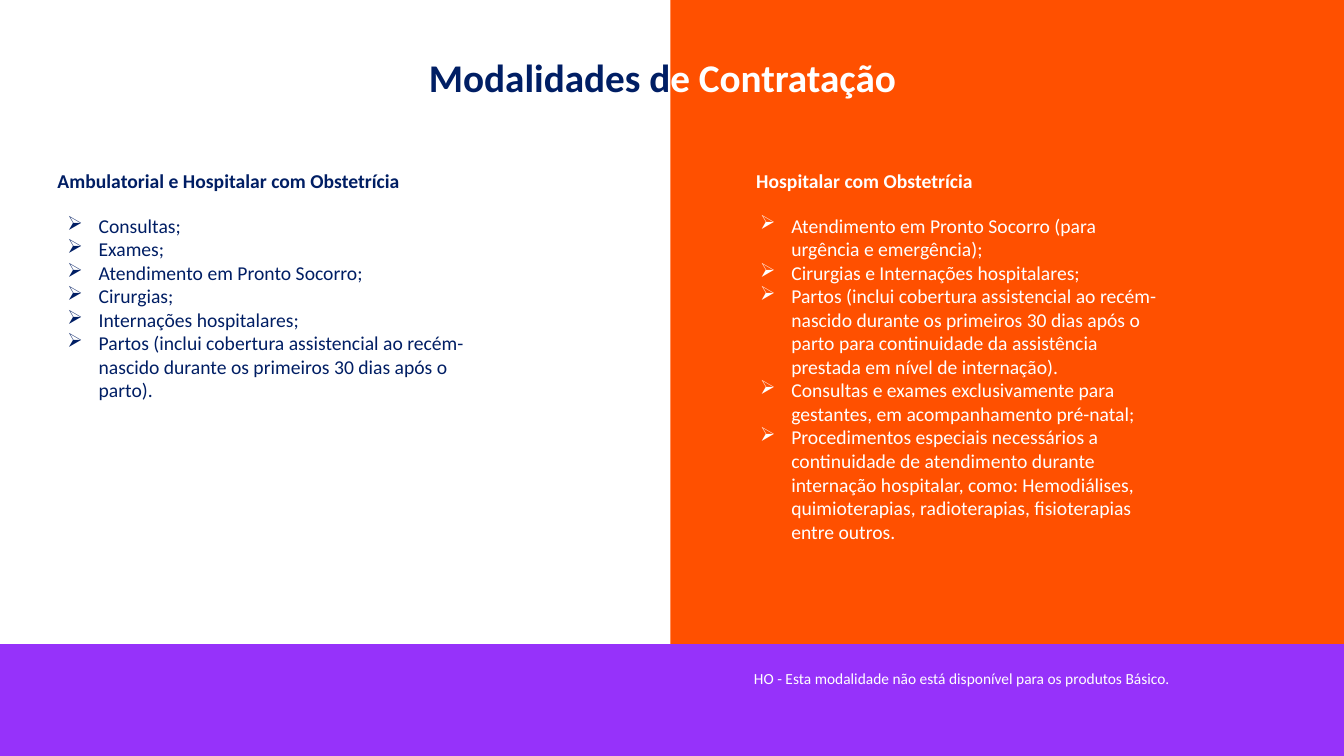
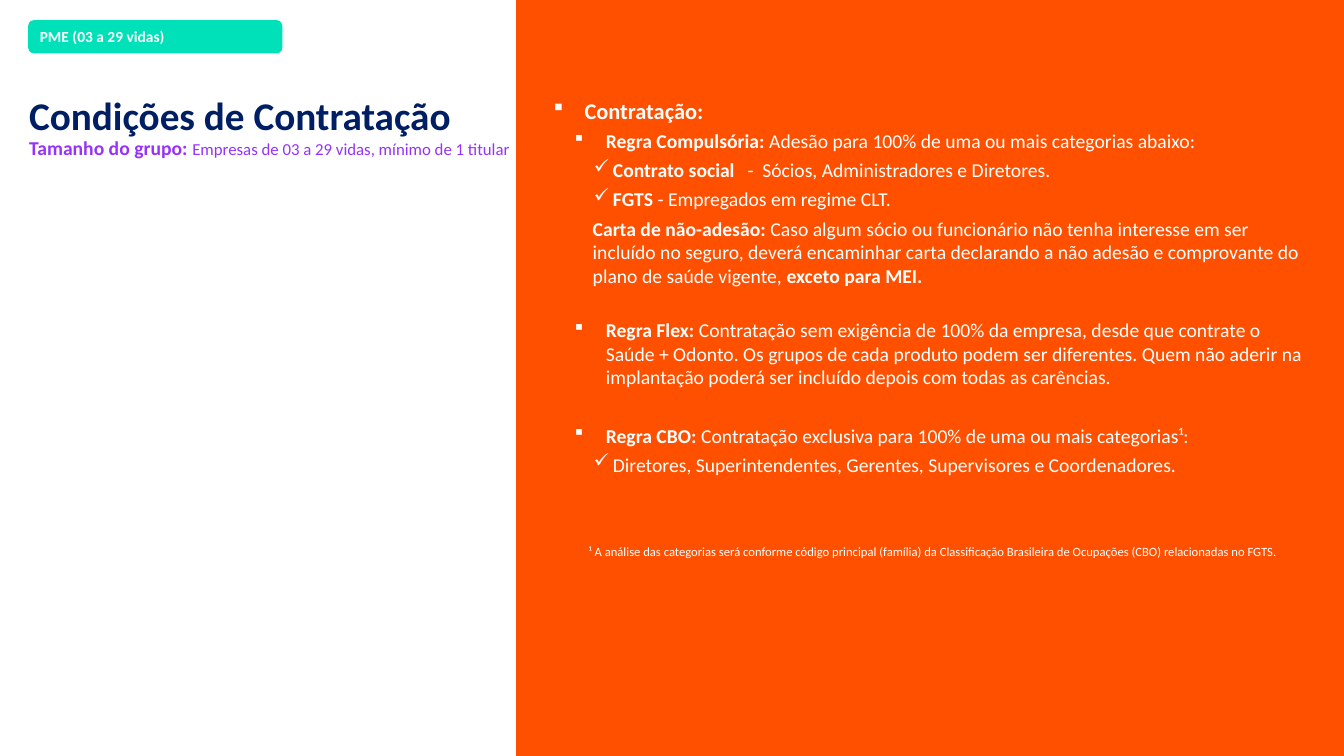
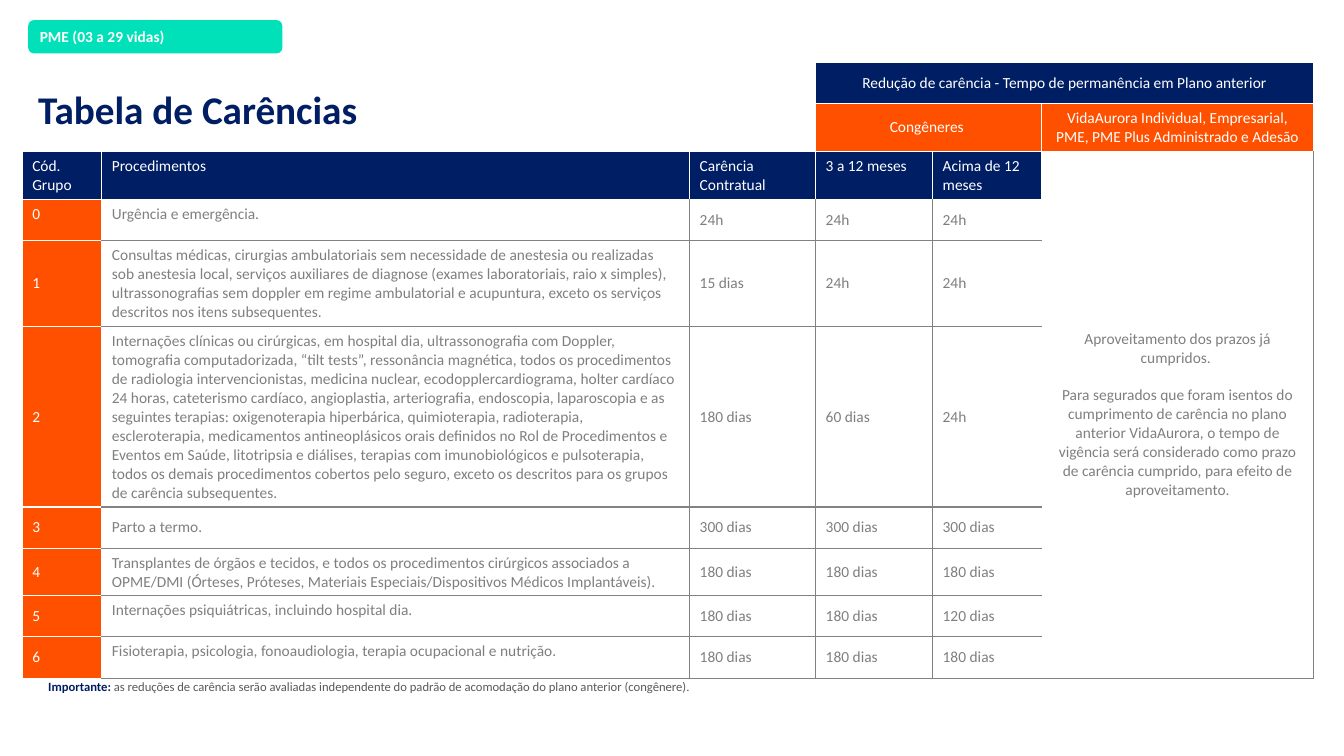
from dataclasses import dataclass

from lxml import etree
from pptx import Presentation
from pptx import util as u
from pptx.dml.color import RGBColor
from pptx.enum import shapes, text
from pptx.oxml import ns

PX = 9144
FONT = "Calibri"
BULLET_FONT = "Wingdings"
ARROW, SQUARE, TICK = "Ø", "§", "ü"
COLOURS = {
    "white": "FFFFFF",
    "navy": "001E64",
    "orange": "FF5000",
    "purple": "9632FA",
    "mint": "00E1B9",
    "grey": "7F7F7F",
    "rule": "828282",
    "dark": "595959",
}
TOP, MIDDLE = text.MSO_ANCHOR.TOP, text.MSO_ANCHOR.MIDDLE
LEFT, CENTER = text.PP_ALIGN.LEFT, text.PP_ALIGN.CENTER


@dataclass(frozen=True)
class Box:
    x: int
    y: int
    w: int
    h: int

    def emu(self) -> list[u.Emu]:
        return [u.Emu(side * PX) for side in (self.x, self.y, self.w, self.h)]


@dataclass(frozen=True)
class Run:
    words: str
    size: int = 14
    colour: str = "white"
    bold: bool = False
    tracking: int = 0


@dataclass(frozen=True)
class Para:
    runs: tuple[Run, ...]
    align: text.PP_ALIGN = LEFT
    line: float = 1.0
    before: int = 0
    level: int = 0
    margin: int = 0
    hang: int = 0
    bullet: str = ""


@dataclass(frozen=True)
class Edges:
    left: str
    right: str
    top: str
    bottom: str


@dataclass(frozen=True)
class Waiting:
    group: str
    procedure: str
    periods: tuple[str, str, str]
    height: int = 41
    group_anchor: text.MSO_ANCHOR = MIDDLE
    procedure_anchor: text.MSO_ANCHOR = TOP


def rgb(name: str) -> RGBColor:
    return RGBColor.from_string(COLOURS[name])


def add_bullet(props, char: str, colour: str) -> None:
    tint = etree.SubElement(props, ns.qn("a:buClr"))
    etree.SubElement(tint, ns.qn("a:srgbClr"), val=COLOURS[colour])
    etree.SubElement(props, ns.qn("a:buFont"), typeface=BULLET_FONT,
                     pitchFamily="2", charset="2")
    etree.SubElement(props, ns.qn("a:buChar"), char=char)


def write(frame, paras: list[Para]) -> None:
    for index, para in enumerate(paras):
        line = frame.paragraphs[0] if index == 0 else frame.add_paragraph()
        if para.margin:
            props = line._p.get_or_add_pPr()
            props.set("marL", str(para.margin * PX))
            props.set("indent", str(-para.hang * PX))
            if para.bullet:
                add_bullet(props, para.bullet, para.runs[0].colour)
        line.level = para.level
        line.alignment = para.align
        line.line_spacing = para.line
        line.space_before = u.Pt(para.before)
        for part in para.runs:
            run = line.add_run()
            run.text = part.words
            run.font.name = FONT
            run.font.size = u.Pt(part.size)
            run.font.bold = part.bold
            run.font.color.rgb = rgb(part.colour)
            if part.tracking:
                run._r.get_or_add_rPr().set("spc", str(part.tracking * 100))


def add_words(slide, box: Box, paras: list[Para], inset: bool = True) -> None:
    frame = slide.shapes.add_textbox(*box.emu()).text_frame
    frame.word_wrap = True
    if not inset:
        frame.margin_left = frame.margin_right = 0
        frame.margin_top = frame.margin_bottom = 0
    write(frame, paras)


def add_panel(slide, box: Box, colour: str, kind=shapes.MSO_SHAPE.RECTANGLE):
    panel = slide.shapes.add_shape(kind, *box.emu())
    panel.shadow.inherit = False
    panel.fill.solid()
    panel.fill.fore_color.rgb = rgb(colour)
    panel.line.fill.background()
    return panel


def add_group_tag(slide) -> None:
    tag = add_panel(slide, Box(28, 20, 252, 33), "mint",
                    shapes.MSO_SHAPE.ROUNDED_RECTANGLE)
    tag.adjustments[0] = 0.17
    tag.text_frame.vertical_anchor = MIDDLE
    write(tag.text_frame, [Para((Run("PME (03 a 29 vidas)", 11, bold=True),))])


def title(*runs: tuple[str, str], align=LEFT) -> Para:
    return Para(tuple(Run(words, 28, colour, True) for words, colour in runs),
                align, 0.9)


def add_coverage(slide, heading: Box, items: Box, colour: str,
                 name: str, benefits: list[str]) -> None:
    add_words(slide, heading, [Para((Run(name, colour=colour, bold=True),))],
              inset=False)
    add_words(slide, items, [
        Para((Run(benefit, colour=colour),), margin=31, hang=31, bullet=ARROW)
        for benefit in benefits])


def build_modalities(slide) -> None:
    add_panel(slide, Box(665, 0, 668, 639), "orange")
    add_panel(slide, Box(0, 639, 1333, 111), "purple")
    add_words(slide, Box(413, 53, 488, 43), [
        title(("Modalidades d", "navy"), ("e Contratação", "white"),
              align=CENTER)])
    add_coverage(
        slide, Box(750, 168, 345, 24), Box(744, 207, 421, 340), "white",
        "Hospitalar com Obstetrícia", [
            "Atendimento em Pronto Socorro (para urgência e emergência);",
            "Cirurgias e Internações hospitalares;",
            "Partos (inclui cobertura assistencial ao recém-nascido durante "
            "os primeiros 30 dias após o parto para continuidade da "
            "assistência prestada em nível de internação).",
            "Consultas e exames exclusivamente para gestantes, em "
            "acompanhamento pré-natal;",
            "Procedimentos especiais necessários a continuidade de "
            "atendimento durante internação hospitalar, como: Hemodiálises, "
            "quimioterapias, radioterapias, fisioterapias entre outros."])
    add_coverage(
        slide, Box(57, 168, 455, 24), Box(57, 207, 421, 199), "navy",
        "Ambulatorial e Hospitalar com Obstetrícia", [
            "Consultas;",
            "Exames;",
            "Atendimento em Pronto Socorro;",
            "Cirurgias;",
            "Internações hospitalares;",
            "Partos (inclui cobertura assistencial ao recém-nascido durante "
            "os primeiros 30 dias após o parto)."])
    add_words(slide, Box(738, 659, 596, 47), [Para((Run(
        "HO - Esta modalidade não está disponível para os produtos Básico.",
        11),))])


def rule(name: str, words: str, before: int = 4) -> Para:
    return Para((Run(name, bold=True), Run(words)), before=before, level=1,
                margin=52, hang=31, bullet=SQUARE)


def check(*runs: Run) -> Para:
    return Para(runs, before=4, level=2, margin=59, hang=19, bullet=TICK)


def build_conditions(slide) -> None:
    add_panel(slide, Box(512, 0, 821, 750), "orange")
    add_words(slide, Box(19, 91, 555, 83), [
        title(("Condições de Contratação", "navy")),
        Para((Run("Tamanho do grupo: ", 14, "purple", True),
              Run("Empresas de 03 a 29 vidas, mínimo de 1 titular", 12,
                  "purple")), line=0.9)])
    add_words(slide, Box(539, 91, 768, 396), [
        Para((Run("Contratação:", 16, bold=True),),
             margin=31, hang=31, bullet=SQUARE),
        rule("Regra Compulsória:",
             " Adesão para 100% de uma ou mais categorias abaixo:"),
        check(Run("Contrato social", bold=True), Run(" ", tracking=6),
              Run("-"), Run(" ", tracking=3),
              Run("Sócios, Administradores e Diretores.")),
        check(Run("FGTS", bold=True), Run(" - Empregados em regime CLT.")),
        Para((Run("Carta de não-adesão:", bold=True),
              Run(" Caso algum sócio ou funcionário não tenha interesse em "
                  "ser incluído no seguro, deverá encaminhar carta declarando "
                  "a não adesão e comprovante do plano de saúde vigente, "),
              Run("exceto para MEI.", bold=True)),
             before=4, level=1, margin=39),
        rule("Regra Flex:",
             " Contratação sem exigência de 100% da empresa, desde que "
             "contrate o Saúde + Odonto. Os grupos de cada produto podem ser "
             "diferentes. Quem não aderir na implantação poderá ser incluído "
             "depois com todas as carências.", 22),
        rule("Regra CBO:", " Contratação exclusiva para 100% de uma ou mais "
             "categorias¹:", 25),
        check(Run("Diretores, Superintendentes, Gerentes, Supervisores e "
                  "Coordenadores."))])
    add_words(slide, Box(574, 535, 752, 25), [Para((Run(
        "¹ A análise das categorias será conforme código principal (família) "
        "da Classificação Brasileira de Ocupações (CBO) relacionadas no "
        "FGTS.", 9),))])
    add_group_tag(slide)


COLUMNS = (79, 583, 125, 116, 108, 270)
HEADER_HEIGHTS = (41, 47, 48)
HEADERS = ("Cód. Grupo", "Procedimentos", "Carência Contratual",
           "3 a 12 meses", "Acima de 12 meses")
WHITE_EDGES = Edges("white", "white", "white", "white")
WAITINGS = (
    Waiting("0", "Urgência e emergência.", ("24h", "24h", "24h"),
            group_anchor=TOP),
    Waiting("1", "Consultas médicas, cirurgias ambulatoriais sem necessidade "
            "de anestesia ou realizadas sob anestesia local, serviços "
            "auxiliares de diagnose (exames laboratoriais, raio x simples), "
            "ultrassonografias sem doppler em regime ambulatorial e "
            "acupuntura, exceto os serviços descritos nos itens "
            "subsequentes.", ("15 dias", "24h", "24h"), 85),
    Waiting("2", "Internações clínicas ou cirúrgicas, em hospital dia, "
            "ultrassonografia com Doppler, tomografia computadorizada, “tilt "
            "tests”, ressonância magnética, todos os procedimentos de "
            "radiologia intervencionistas, medicina nuclear, "
            "ecodopplercardiograma, holter cardíaco 24 horas, cateterismo "
            "cardíaco, angioplastia, arteriografia, endoscopia, laparoscopia "
            "e as seguintes terapias: oxigenoterapia hiperbárica, "
            "quimioterapia, radioterapia, escleroterapia, medicamentos "
            "antineoplásicos orais definidos no Rol de Procedimentos e "
            "Eventos em Saúde, litotripsia e diálises, terapias com "
            "imunobiológicos e pulsoterapia, todos os demais procedimentos "
            "cobertos pelo seguro, exceto os descritos para os grupos de "
            "carência subsequentes.", ("180 dias", "60 dias", "24h"), 179),
    Waiting("3", "Parto a termo.", ("300 dias",) * 3,
            procedure_anchor=MIDDLE),
    Waiting("4", "Transplantes de órgãos e tecidos, e todos os procedimentos "
            "cirúrgicos associados a OPME/DMI (Órteses, Próteses, Materiais "
            "Especiais/Dispositivos Médicos Implantáveis).",
            ("180 dias",) * 3, 47),
    Waiting("5", "Internações psiquiátricas, incluindo hospital dia.",
            ("180 dias", "180 dias", "120 dias")),
    Waiting("6", "Fisioterapia, psicologia, fonoaudiologia, terapia "
            "ocupacional e nutrição.", ("180 dias",) * 3),
)


def style_cell(cell, edges: Edges, fill: str = "") -> None:
    props = cell._tc.get_or_add_tcPr()
    for tag, colour in (("a:lnL", edges.left), ("a:lnR", edges.right),
                        ("a:lnT", edges.top), ("a:lnB", edges.bottom)):
        border = etree.SubElement(props, ns.qn(tag), w=str(u.Pt(1)))
        paint = etree.SubElement(border, ns.qn("a:solidFill"))
        etree.SubElement(paint, ns.qn("a:srgbClr"), val=COLOURS[colour])
    if fill:
        cell.fill.solid()
        cell.fill.fore_color.rgb = rgb(fill)
    else:
        cell.fill.background()


def fill_cell(grid, row: int, col: int, words: tuple[str, ...] = (),
              fill: str = "", edges: Edges = WHITE_EDGES,
              anchor=MIDDLE, align=LEFT, rows: int = 1, cols: int = 1) -> None:
    cell = grid.cell(row, col)
    if rows * cols > 1:
        cell.merge(grid.cell(row + rows - 1, col + cols - 1))
    for r in range(row, row + rows):
        for c in range(col, col + cols):
            style_cell(grid.cell(r, c), edges, fill)
    cell.vertical_anchor = anchor
    colour = "white" if fill else "grey"
    write(cell.text_frame, [
        Para((Run(line, 11, colour),), align, before=13 if index else 0)
        for index, line in enumerate(words)])


def build_waiting_table(slide) -> None:
    heights = HEADER_HEIGHTS + tuple(item.height for item in WAITINGS)
    box = Box(22, 62, sum(COLUMNS), sum(heights))
    grid = slide.shapes.add_table(len(heights), len(COLUMNS),
                                  *box.emu()).table
    grid.first_row = grid.horz_banding = False
    for column, width in zip(grid.columns, COLUMNS):
        column.width = u.Emu(width * PX)
    for row, height in zip(grid.rows, heights):
        row.height = u.Emu(height * PX)

    fill_cell(grid, 0, 0, rows=2, cols=3)
    fill_cell(grid, 0, 3, ("Redução de carência - Tempo de permanência em "
                           "Plano anterior",), "navy", align=CENTER, cols=3)
    fill_cell(grid, 1, 3, ("Congêneres ",), "orange", align=CENTER, cols=2)
    fill_cell(grid, 1, 5, ("VidaAurora Individual, Empresarial, PME, PME Plus "
                           "Administrado e Adesão",), "orange", align=CENTER)
    for col, header in enumerate(HEADERS):
        fill_cell(grid, 2, col, (header,), "navy", anchor=TOP)
    fill_cell(grid, 2, 5, (
        "Aproveitamento dos prazos já cumpridos. ",
        "Para segurados que foram isentos do cumprimento de carência no plano "
        "anterior VidaAurora, o tempo de vigência será considerado como prazo "
        "de carência cumprido, para efeito de aproveitamento."),
        edges=Edges("white", "rule", "white", "rule"), align=CENTER,
        rows=len(WAITINGS) + 1)
    for row, item in enumerate(WAITINGS, len(HEADER_HEIGHTS)):
        top = "white" if item is WAITINGS[0] else "rule"
        fill_cell(grid, row, 0, (item.group,), "orange",
                  anchor=item.group_anchor)
        fill_cell(grid, row, 1, (item.procedure,),
                  edges=Edges("white", "rule", top, "rule"),
                  anchor=item.procedure_anchor)
        for col, period in enumerate(item.periods, 2):
            fill_cell(grid, row, col, (period,),
                      edges=Edges("rule", "rule", top, "rule"))


def build_waiting_periods(slide) -> None:
    build_waiting_table(slide)
    add_words(slide, Box(28, 85, 343, 43),
              [title(("Tabela de Carências", "navy"))])
    add_words(slide, Box(38, 669, 757, 25), [Para((
        Run("Importante: ", 9, "navy", True),
        Run("as reduções de carência serão avaliadas independente do padrão "
            "de acomodação do plano anterior (congênere).", 9, "dark")))])
    add_group_tag(slide)


def main() -> None:
    deck = Presentation()
    deck.slide_width, deck.slide_height = u.Emu(1333 * PX), u.Emu(750 * PX)
    for build in (build_modalities, build_conditions, build_waiting_periods):
        build(deck.slides.add_slide(deck.slide_layouts[6]))
    deck.save("out.pptx")


if __name__ == "__main__":
    main()
